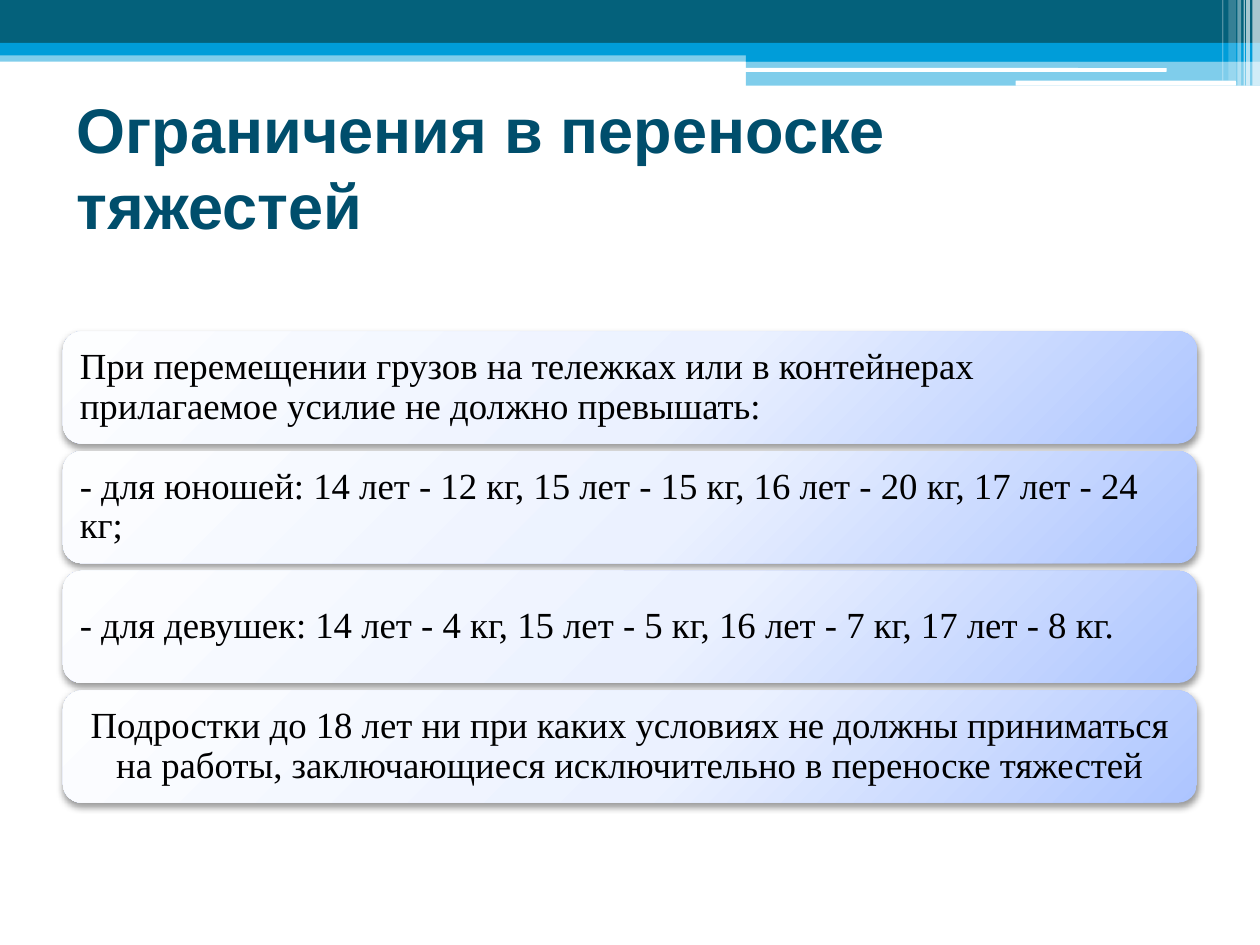
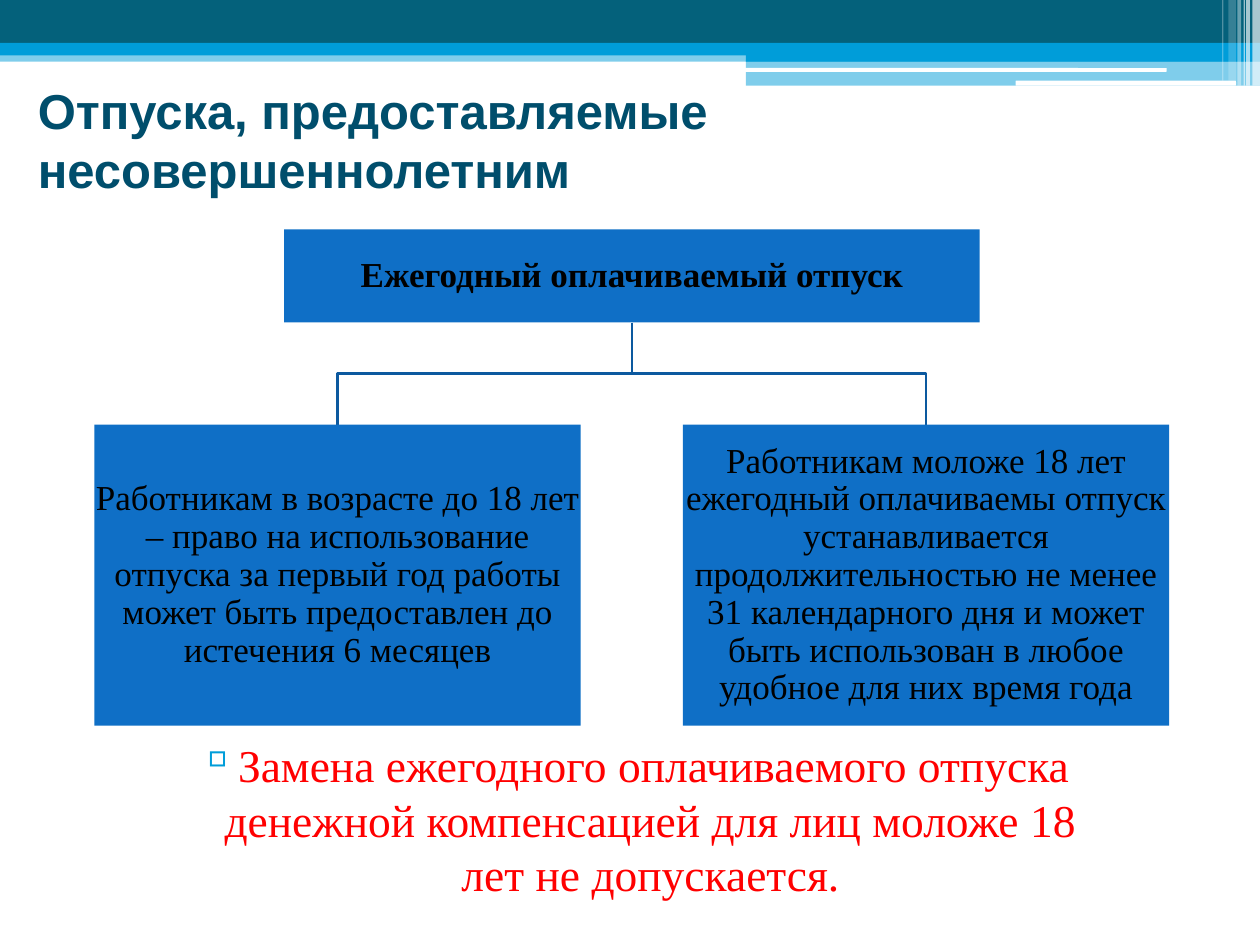
import pptx
import pptx.util
import pptx.dml.color
import pptx.enum.shapes
import pptx.enum.text
import pptx.oxml
import pptx.oxml.ns

Inches = pptx.util.Inches
Pt = pptx.util.Pt
SHAPE = pptx.enum.shapes.MSO_SHAPE
ALIGN = pptx.enum.text.PP_ALIGN
ANCHOR = pptx.enum.text.MSO_ANCHOR

TEAL, SKY, WHITE = "04617B", "009DD9", "FFFFFF"
HEADING, BLUE, BRANCH, BLACK, RED = "004E6C", "0F6FC6", "0C599F", "000000", "FF0000"
HEAD_FONT, BODY_FONT = "Arial", "Times New Roman"
CARD_STOPS = [(0, "FDFEFF"), (55, "EBF1FF"), (100, "ADC5FF")]

BANDS = [
    (0, 0.4, 10, 0.09, SKY, 50),
    (0, 0, 10, 0.34, TEAL, 100),
    (0, 0.34, 10, 0.1, SKY, 100),
    (5.92, 0.39, 4.08, 0.1, SKY, 100),
    (5.92, 0.48, 4.08, 0.2, SKY, 50),
]
SLITS = [(5.91, 0.54, 3.35, 0.03), (8.06, 0.64, 1.75, 0.04)]
STRIPES = [
    (9.94, 0.06, 0.68, 65),
    (9.89, 0.03, 0.68, 65),
    (9.87, 0.01, 0.68, 60),
    (9.82, 0.03, 0.68, 40),
    (9.75, 0.06, 0.64, 20),
    (9.7, 0.01, 0.64, 30),
]


def colour(hex_value):
    return pptx.dml.color.RGBColor.from_string(hex_value)


def xml(markup):
    tag, rest = markup[1:].split(" ", 1)
    return pptx.oxml.parse_xml(f"<{tag} {pptx.oxml.ns.nsdecls('a')} {rest}")


def add_block(slide, box, fill=None, opacity=100, kind=SHAPE.RECTANGLE):
    block = slide.shapes.add_shape(kind, *map(Inches, box))
    block.shadow.inherit = False
    block.line.fill.background()
    if fill is None:
        block.fill.background()
        return block
    block.fill.solid()
    block.fill.fore_color.rgb = colour(fill)
    if opacity < 100:
        tint = block.element.spPr.find(".//" + pptx.oxml.ns.qn("a:srgbClr"))
        tint.append(xml(f'<a:alpha val="{opacity * 1000}"/>'))
    return block


def write(holder, text, size, ink=BLACK, font=BODY_FONT, bold=False, align=ALIGN.LEFT,
          anchor=ANCHOR.MIDDLE, inset=None, spacing=None, before=None):
    frame = holder.text_frame
    frame.word_wrap = True
    frame.auto_size = pptx.enum.text.MSO_AUTO_SIZE.NONE
    frame.vertical_anchor = anchor
    if inset is not None:
        frame.margin_left = frame.margin_right = Inches(inset)
        frame.margin_top = frame.margin_bottom = Inches(inset)
    paragraph = frame.paragraphs[0]
    paragraph.alignment = align
    if spacing is not None:
        paragraph.line_spacing = spacing
    if before is not None:
        paragraph.space_before = Pt(before)
    run = paragraph.add_run()
    run.text = text
    run.font.name = font
    run.font.size = Pt(size)
    run.font.bold = bold
    run.font.color.rgb = colour(ink)
    return paragraph


def move_header_to_layout(slide, layout):
    parts = [add_block(slide, box, fill, opacity) for *box, fill, opacity in BANDS]
    parts += [add_block(slide, box, WHITE, kind=SHAPE.ROUNDED_RECTANGLE) for box in SLITS]
    parts += [add_block(slide, (left, 0, width, height), WHITE, opacity)
              for left, width, height, opacity in STRIPES]
    for position, part in enumerate(parts, start=2):
        layout.shapes.element.insert(position, part.element)


def place_title(slide, box, text, size):
    title = slide.shapes.title
    title.left, title.top, title.width, title.height = map(Inches, box)
    write(title, text, size, HEADING, HEAD_FONT, bold=True)


def style_card(card):
    stops = "".join(f'<a:gs pos="{position * 1000}"><a:srgbClr val="{tint}"/></a:gs>'
                    for position, tint in CARD_STOPS)
    gradient = xml(f'<a:gradFill rotWithShape="1"><a:gsLst>{stops}</a:gsLst><a:path path="circle">'
                   '<a:fillToRect l="-40000" t="-90000" r="140000" b="190000"/>'
                   '</a:path></a:gradFill>')
    shadow = xml('<a:outerShdw blurRad="52000" dist="25400" dir="5400000" rotWithShape="0">'
                 '<a:srgbClr val="000000"><a:alpha val="40000"/></a:srgbClr></a:outerShdw>')
    properties = card.element.spPr
    properties.replace(properties.find(pptx.oxml.ns.qn("a:noFill")), gradient)
    properties.find(pptx.oxml.ns.qn("a:effectLst")).append(shadow)


def add_cards(slide, box, rules, gap=0.06):
    left, top, width, height = box
    card_height = (height - gap * (len(rules) - 1)) / len(rules)
    for row, (rule, align) in enumerate(rules):
        card_top = top + row * (card_height + gap)
        card = add_block(slide, (left, card_top, width, card_height),
                         kind=SHAPE.ROUNDED_RECTANGLE)
        style_card(card)
        write(card, rule, 21, align=align, inset=0.09, spacing=0.9)


def add_branch(slide, start, end):
    (start_x, start_y), (end_x, end_y) = start, end
    bend = (start_y + end_y) / 2
    builder = slide.shapes.build_freeform(Inches(start_x), Inches(start_y))
    corners = [(start_x, bend), (end_x, bend), (end_x, end_y)]
    builder.add_line_segments([(Inches(x), Inches(y)) for x, y in corners], close=False)
    branch = builder.convert_to_shape()
    branch.shadow.inherit = False
    branch.fill.background()
    branch.line.color.rgb = colour(BRANCH)
    branch.line.width = Pt(1.5)


def add_leave_tree(slide, box, root, leaves):
    left, top, width, height = box
    root_width, root_height = 5.52, 0.74
    leaf_width, leaf_height = 3.86, 2.39
    middle = left + width / 2
    leaf_top = top + height - leaf_height
    step = (width - leaf_width) / (len(leaves) - 1)
    leaf_lefts = [left + column * step for column in range(len(leaves))]
    for leaf_left in leaf_lefts:
        add_branch(slide, (middle, top + root_height), (leaf_left + leaf_width / 2, leaf_top))
    nodes = [((middle - root_width / 2, top, root_width, root_height), root, True)]
    nodes += [((leaf_left, leaf_top, leaf_width, leaf_height), leaf, False)
              for leaf_left, leaf in zip(leaf_lefts, leaves)]
    for node_box, text, bold in nodes:
        write(add_block(slide, node_box, BLUE), text, 20, bold=bold,
              align=ALIGN.CENTER, inset=0.01, spacing=0.9)


def add_warning(slide, box, text):
    warning = slide.shapes.add_textbox(*map(Inches, box))
    paragraph = write(warning, text, 26, RED, align=ALIGN.CENTER, anchor=ANCHOR.TOP, before=3)
    properties = paragraph._p.get_or_add_pPr()
    properties.set("marL", str(Inches(0.72)))
    properties.set("indent", str(Inches(-0.27)))
    properties.append(xml(f'<a:buClr ><a:srgbClr val="{SKY}"/></a:buClr>'))
    properties.append(xml('<a:buChar char="▫"/>'))


def build_lifting_slide(slide):
    place_title(slide, (0.51, 0.76, 9, 1.12), "Ограничения в переноске тяжестей", 36)
    add_cards(slide, (0.5, 2.63, 9, 3.74), [
        ("При перемещении грузов на тележках или в контейнерах прилагаемое усилие "
         "не должно превышать:", ALIGN.LEFT),
        ("- для юношей: 14 лет - 12 кг, 15 лет - 15 кг, 16 лет - 20 кг, 17 лет - 24 кг;",
         ALIGN.LEFT),
        ("- для девушек: 14 лет - 4 кг, 15 лет - 5 кг, 16 лет - 7 кг, 17 лет - 8 кг.",
         ALIGN.LEFT),
        ("Подростки до 18 лет ни при каких условиях не должны приниматься на работы, "
         "заключающиеся исключительно в переноске тяжестей", ALIGN.CENTER),
    ])


def build_leave_slide(slide):
    place_title(slide, (0.2, 0.52, 9.37, 1.17),
                "Отпуска, предоставляемые несовершеннолетним", 28)
    add_leave_tree(slide, (0.75, 1.82, 8.53, 3.94), "Ежегодный оплачиваемый отпуск", [
        "Работникам в возрасте до 18 лет – право на использование отпуска за первый год "
        "работы может быть предоставлен до истечения 6 месяцев",
        "Работникам моложе 18 лет ежегодный оплачиваемы отпуск устанавливается "
        "продолжительностью не менее 31 календарного дня и может быть использован "
        "в любое удобное для них время года",
    ])
    add_warning(slide, (0.83, 5.8, 7.95, 1.41),
                "Замена ежегодного оплачиваемого отпуска денежной компенсацией "
                "для лиц моложе 18 лет не допускается.")


def main():
    deck = pptx.Presentation()
    deck.slide_width, deck.slide_height = Inches(10), Inches(7.5)
    layout = deck.slide_layouts[5]
    lifting, leave = [deck.slides.add_slide(layout) for _ in range(2)]
    move_header_to_layout(lifting, layout)
    build_lifting_slide(lifting)
    build_leave_slide(leave)
    deck.save("out.pptx")


if __name__ == "__main__":
    main()
